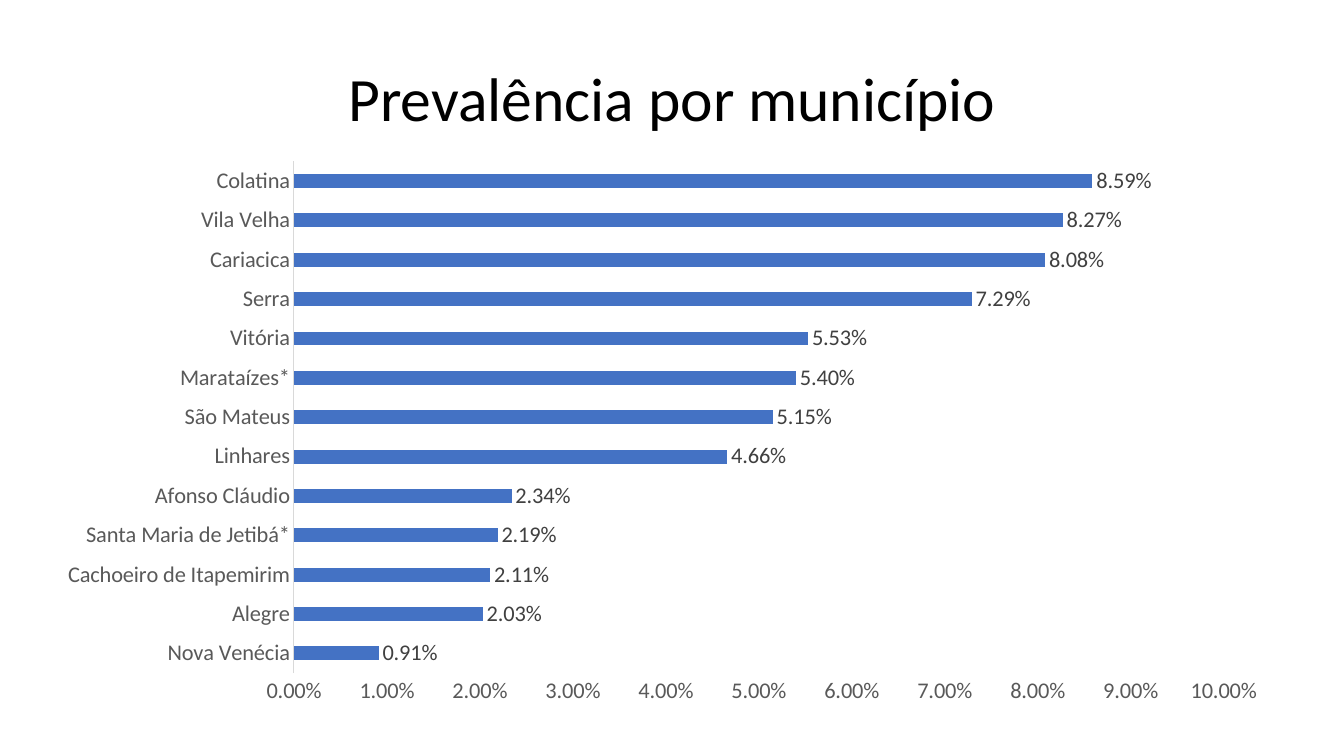
from pptx import Presentation
from pptx.chart.data import CategoryChartData
from pptx.dml.color import RGBColor
from pptx.enum import chart as ch, text
from pptx.util import Inches, Pt

FONT = "Calibri"
PERCENT = "0.00%"
BLACK = RGBColor(0x00, 0x00, 0x00)
BLUE = RGBColor(0x44, 0x72, 0xC4)
AXIS_TEXT = RGBColor(0x59, 0x59, 0x59)
LABEL_TEXT = RGBColor(0x40, 0x40, 0x40)
AXIS_LINE = RGBColor(0xD9, 0xD9, 0xD9)

PREVALENCE = {
    "Nova Venécia": 0.0091,
    "Alegre": 0.0203,
    "Cachoeiro de Itapemirim": 0.0211,
    "Santa Maria de Jetibá*": 0.0219,
    "Afonso Cláudio": 0.0234,
    "Linhares": 0.0466,
    "São Mateus": 0.0515,
    "Marataízes*": 0.054,
    "Vitória": 0.0553,
    "Serra": 0.0729,
    "Cariacica": 0.0808,
    "Vila Velha": 0.0827,
    "Colatina": 0.0859,
}


def style_font(font, size, color):
    font.name = FONT
    font.size = Pt(size)
    font.color.rgb = color


def add_title(slide, wording):
    title = slide.shapes.add_textbox(
        Inches(0.92), Inches(0.4), Inches(11.5), Inches(1.21))
    frame = title.text_frame
    frame.word_wrap = True
    frame.vertical_anchor = text.MSO_ANCHOR.MIDDLE
    heading = frame.paragraphs[0]
    heading.text = wording
    heading.alignment = text.PP_ALIGN.CENTER
    heading.line_spacing = 0.9
    style_font(heading.font, 44, BLACK)


def style_axis(axis):
    axis.has_major_gridlines = False
    axis.major_tick_mark = ch.XL_TICK_MARK.NONE
    axis.minor_tick_mark = ch.XL_TICK_MARK.NONE
    style_font(axis.tick_labels.font, 16, AXIS_TEXT)


def add_prevalence_chart(slide, prevalence):
    data = CategoryChartData(number_format=PERCENT)
    data.categories = list(prevalence)
    data.add_series("Series 1", list(prevalence.values()))
    chart = slide.shapes.add_chart(
        ch.XL_CHART_TYPE.BAR_CLUSTERED, Inches(0.43), Inches(1.49),
        Inches(12.28), Inches(5.61), data).chart
    chart.has_legend = False
    chart.has_title = False
    style_font(chart.font, 10, BLACK)

    municipalities = chart.category_axis
    style_axis(municipalities)
    municipalities.format.line.color.rgb = AXIS_LINE
    municipalities.format.line.width = Pt(0.75)

    rates = chart.value_axis
    style_axis(rates)
    rates.format.line.fill.background()
    rates.minimum_scale = 0
    rates.maximum_scale = 0.1
    rates.major_unit = 0.01
    rates.tick_labels.number_format = PERCENT
    rates.tick_labels.number_format_is_linked = False

    bars = chart.plots[0]
    bars.gap_width = 182
    bars.vary_by_categories = False
    series = bars.series[0]
    series.invert_if_negative = False
    series.format.fill.solid()
    series.format.fill.fore_color.rgb = BLUE

    labels = series.data_labels
    labels.show_value = True
    labels.number_format = PERCENT
    labels.number_format_is_linked = False
    labels.position = ch.XL_LABEL_POSITION.OUTSIDE_END
    style_font(labels.font, 16, LABEL_TEXT)


def main():
    deck = Presentation()
    deck.slide_width = Inches(13.33)
    deck.slide_height = Inches(7.5)
    slide = deck.slides.add_slide(deck.slide_layouts[6])
    add_title(slide, "Prevalência por município")
    add_prevalence_chart(slide, PREVALENCE)
    deck.save("out.pptx")


if __name__ == "__main__":
    main()
